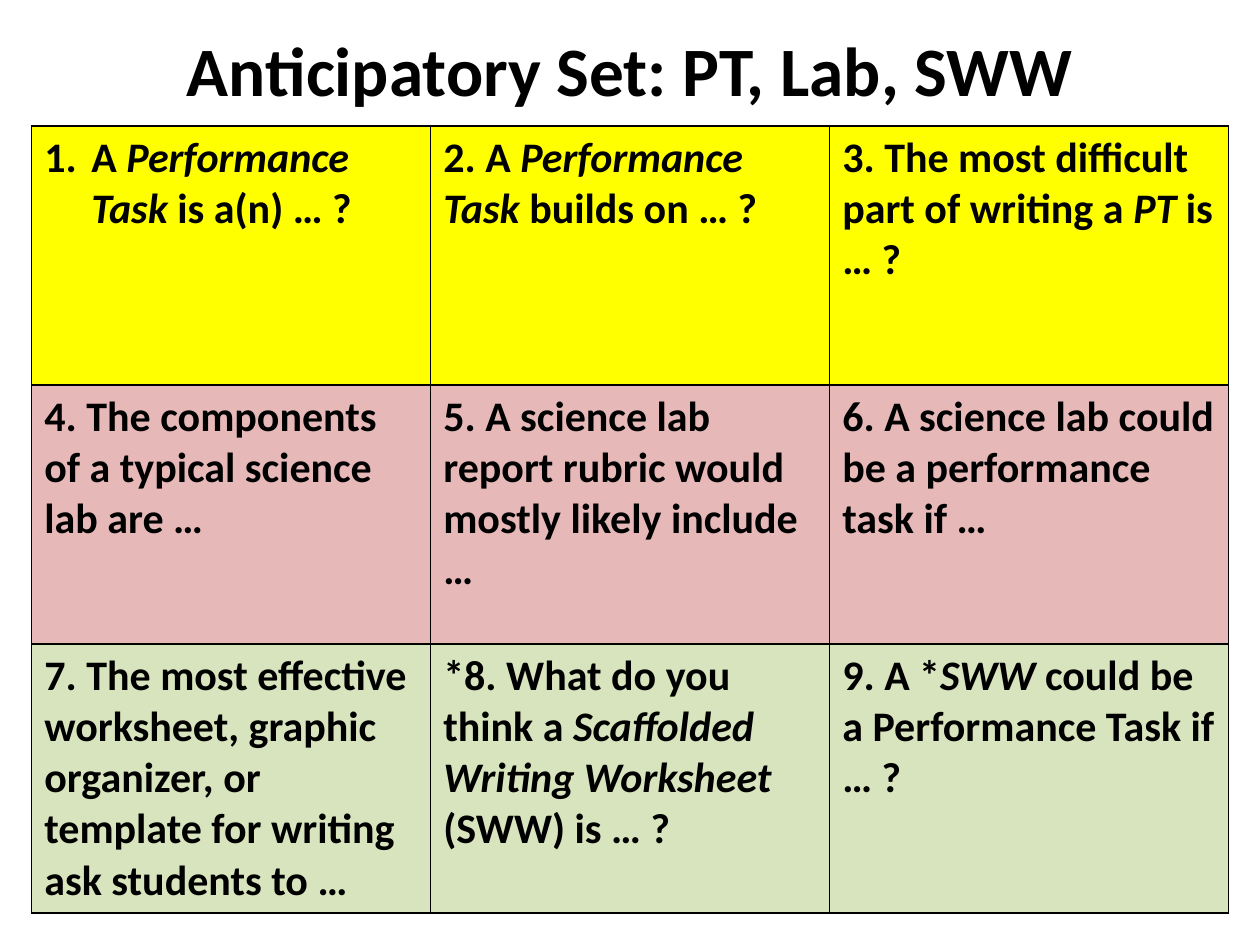
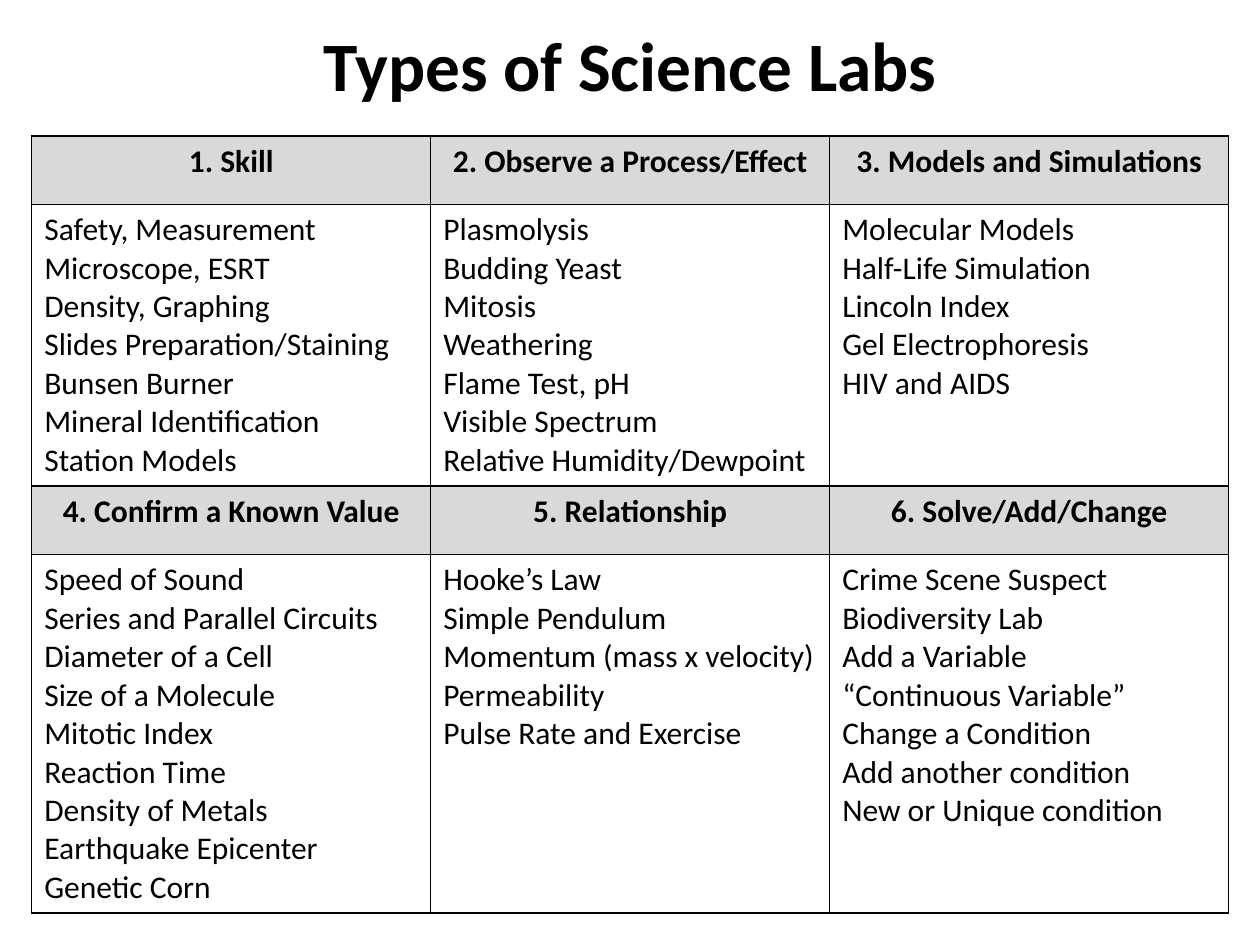
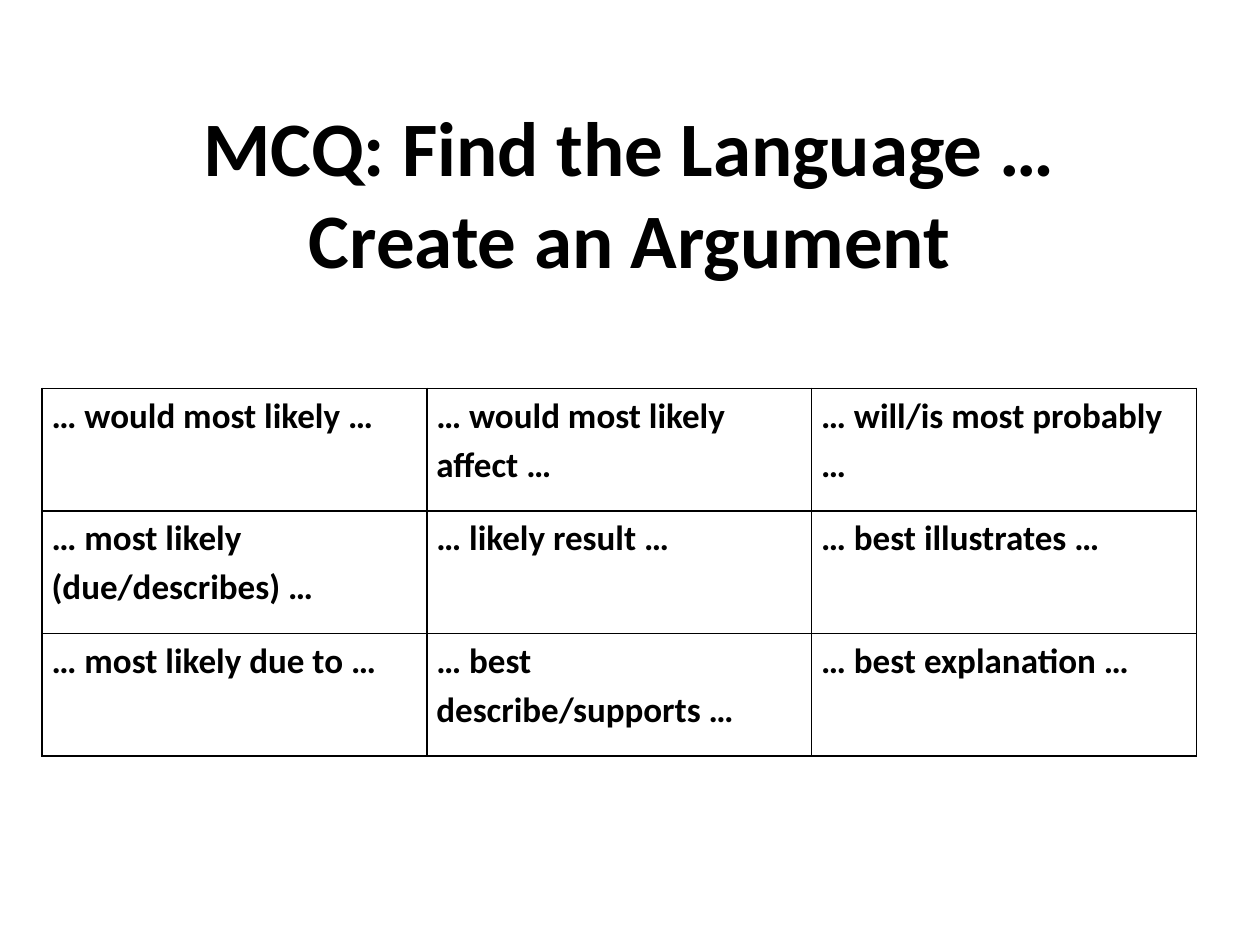
from lxml import etree
from pptx import Presentation
from pptx.dml.color import RGBColor
from pptx.enum.text import MSO_ANCHOR, MSO_AUTO_SIZE, PP_ALIGN
from pptx.oxml.ns import qn
from pptx.util import Cm, Pt

LEFT, CENTER = PP_ALIGN.LEFT, PP_ALIGN.CENTER
MIDDLE = MSO_ANCHOR.MIDDLE
NO_AUTOFIT = MSO_AUTO_SIZE.NONE

FONT = "Calibri"
BLACK, YELLOW, PINK, GREEN, GREY = "000000", "FFFF00", "E6B9B8", "D7E4BD", "D9D9D9"
TITLE_ONLY = 5
COLUMNS = 3
TITLE_LEFT, TITLE_WIDTH = 1.27, 22.86
WIDE_LEFT, WIDE_WIDTH = 0.64, 24.13

QUESTIONS = [
    ["A _Performance Task _is a(n) … ?",
     "2. A _Performance Task _builds on … ?",
     "3. The most difficult part of writing a _PT_ is … ?"],
    ["4. The components of a typical science lab are …",
     "5. A science lab report rubric would mostly likely include …",
     "6. A science lab could be a performance task if …"],
    ["7. The most effective worksheet, graphic organizer, or template for "
     "writing ask students to …",
     "*8. What do you think a _Scaffolded Writing Worksheet _(SWW) is … ?",
     "9. A *_SWW_ could be a Performance Task if … ?"],
]

LAB_TYPES = [
    ["1. Skill", "2. Observe a Process/Effect", "3. Models and Simulations"],
    ["Safety, Measurement\nMicroscope, ESRT\nDensity, Graphing\n"
     "Slides Preparation/Staining\nBunsen Burner\nMineral Identification\n"
     "Station Models",
     "Plasmolysis\nBudding Yeast\nMitosis\nWeathering\nFlame Test, pH\n"
     "Visible Spectrum\nRelative Humidity/Dewpoint",
     "Molecular Models\nHalf-Life Simulation\nLincoln Index\n"
     "Gel Electrophoresis\nHIV and AIDS"],
    ["4. Confirm a Known Value", "5. Relationship", "6. Solve/Add/Change"],
    ["Speed of Sound\nSeries and Parallel Circuits\nDiameter of a Cell\n"
     "Size of a Molecule\nMitotic Index\nReaction Time\nDensity of Metals\n"
     "Earthquake Epicenter\nGenetic Corn",
     "Hooke’s Law\nSimple Pendulum\nMomentum (mass x velocity)\n"
     "Permeability\nPulse Rate and Exercise",
     "Crime Scene Suspect\nBiodiversity Lab\nAdd a Variable\n"
     "“Continuous Variable”\nChange a Condition\nAdd another condition\n"
     "New or Unique condition"],
]

ARGUMENT_PHRASES = [
    ["… would most likely …", "… would most likely affect …",
     "… will/is most probably …"],
    ["… most likely (due/describes) …", "… likely result …",
     "… best illustrates …"],
    ["… most likely due to …", "… best describe/supports …",
     "… best explanation …"],
]


def color(code):
    """Turn a hex string into a colour."""
    return RGBColor.from_string(code)


def write_text(frame, text, size, bold=True, align=LEFT, spacing=None):
    """Write paragraphs split by newlines, with _italic_ spans and \\v line breaks."""
    for index, line in enumerate(text.split("\n")):
        para = frame.add_paragraph() if index else frame.paragraphs[0]
        para.alignment = align
        if spacing:
            para.line_spacing = spacing
        for part, words in enumerate(line.split("_")):
            for row, piece in enumerate(words.split("\v")):
                if row:
                    para.add_line_break()
                if piece:
                    span = para.add_run()
                    span.text = piece
                    span.font.name = FONT
                    span.font.size = Pt(size)
                    span.font.bold = bold
                    span.font.italic = part % 2 == 1
                    span.font.color.rgb = color(BLACK)


def number_paragraph(para, indent):
    """Give a paragraph an automatic number with a hanging indent."""
    props = para._p.get_or_add_pPr()
    props.set("marL", str(Cm(indent)))
    props.set("indent", str(-Cm(indent)))
    etree.SubElement(props, qn("a:buFont"), typeface="+mj-lt")
    etree.SubElement(props, qn("a:buAutoNum"), type="arabicPeriod")


def style_cell(cell, fill):
    """Draw a thin black border around a cell and set its fill."""
    props = cell._tc.get_or_add_tcPr()
    for side in ("lnL", "lnR", "lnT", "lnB"):
        line = etree.SubElement(props, qn(f"a:{side}"), w=str(Pt(1)))
        solid = etree.SubElement(line, qn("a:solidFill"))
        etree.SubElement(solid, qn("a:srgbClr"), val=BLACK)
    if fill:
        cell.fill.solid()
        cell.fill.fore_color.rgb = color(fill)
    else:
        cell.fill.background()


def add_titled_page(deck, text, top, height, size=39.6):
    """Add a page with a bold centred title in its placeholder."""
    page = deck.slides.add_slide(deck.slide_layouts[TITLE_ONLY])
    title = page.shapes.title
    title.left, title.width = Cm(TITLE_LEFT), Cm(TITLE_WIDTH)
    title.top, title.height = Cm(top), Cm(height)
    frame = title.text_frame
    frame.auto_size = NO_AUTOFIT
    frame.vertical_anchor = MIDDLE
    write_text(frame, text, size, align=CENTER)
    return page


def add_grid(page, rows, box, heights, fills, formats, margins=None):
    """Add a bordered table in a box, with one fill and text format per row."""
    left, top, width = box
    table = page.shapes.add_table(len(rows), COLUMNS, Cm(left), Cm(top),
                                  Cm(width), Cm(sum(heights))).table
    table.first_row = table.horz_banding = False
    for column in table.columns:
        column.width = Cm(width / COLUMNS)
    for index, texts in enumerate(rows):
        table.rows[index].height = Cm(heights[index])
        for place, text in enumerate(texts):
            cell = table.cell(index, place)
            style_cell(cell, fills[index])
            if margins:
                side, edge = margins
                cell.margin_left = cell.margin_right = Cm(side)
                cell.margin_top = cell.margin_bottom = Cm(edge)
            write_text(cell.text_frame, text, **formats[index])
    return table


def add_questions_page(deck):
    """Add the nine opening questions."""
    page = add_titled_page(deck, "Anticipatory Set: PT, Lab, SWW", 0.43, 1.9)
    table = add_grid(page, QUESTIONS, (WIDE_LEFT, 2.54, WIDE_WIDTH), [5.22] * 3,
                     [YELLOW, PINK, GREEN], [{"size": 24}] * 3)
    number_paragraph(table.cell(0, 0).text_frame.paragraphs[0], 0.95)


def add_labs_page(deck):
    """Add the six types of lab with their examples."""
    page = add_titled_page(deck, "Types of Science Labs", 0.43, 1.7)
    heading = {"size": 18, "align": CENTER}
    examples = {"size": 18, "bold": False}
    add_grid(page, LAB_TYPES, (WIDE_LEFT, 2.74, WIDE_WIDTH),
             [1.38, 5.67, 1.38, 6.45], [GREY, None] * 2, [heading, examples] * 2)


def add_argument_page(deck):
    """Add the phrases that signal an argument."""
    page = add_titled_page(deck, "MCQ: Find the Language …\vCreate an Argument",
                           0.76, 6.22, size=44)
    add_grid(page, ARGUMENT_PHRASES, (0.85, 7.83, 23.27), [2.47] * 3, [None] * 3,
             [{"size": 20, "spacing": 1.15}] * 3, margins=(0.19, 0))


def main():
    """Build and save the deck."""
    deck = Presentation()
    deck.slide_width, deck.slide_height = Cm(25.4), Cm(19.05)
    add_questions_page(deck)
    add_labs_page(deck)
    add_argument_page(deck)
    deck.save("out.pptx")


if __name__ == "__main__":
    main()
